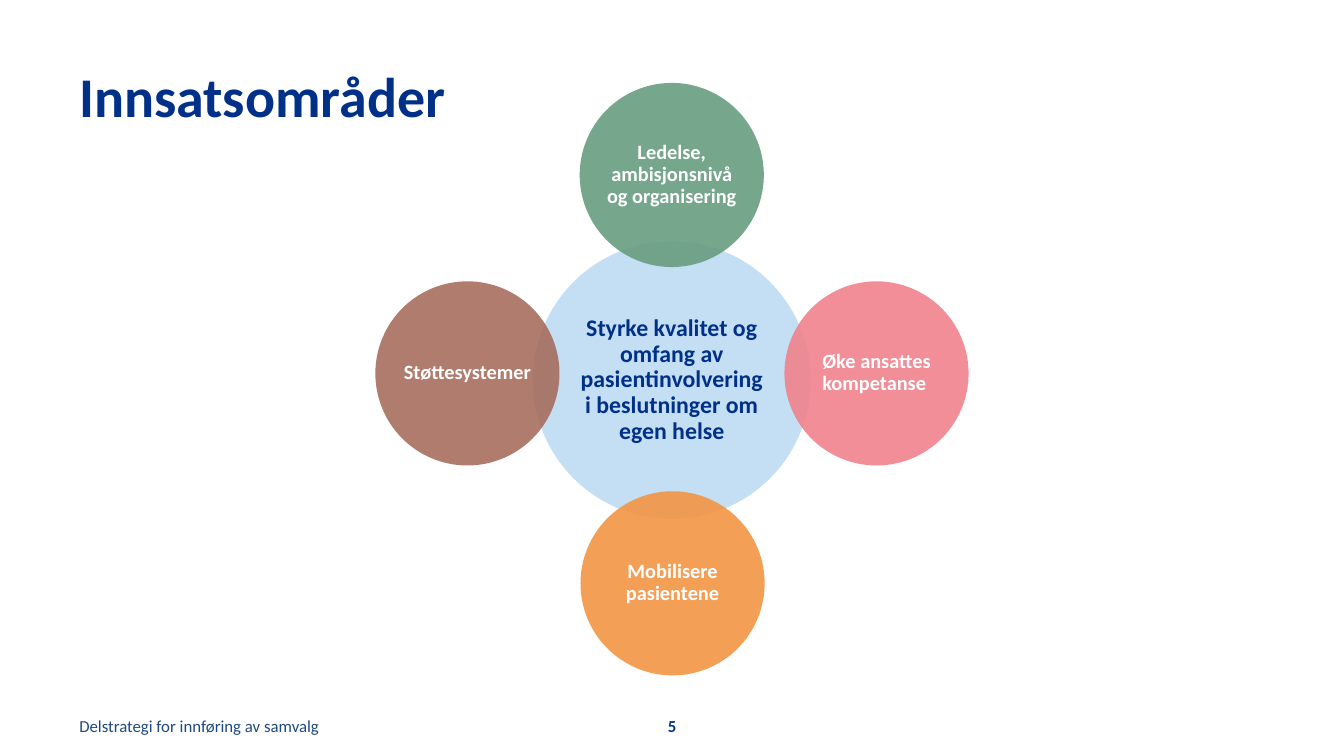
import pptx
import pptx.dml.color
import pptx.enum.shapes
import pptx.enum.text
import pptx.oxml
import pptx.oxml.ns
import pptx.util

Cm = pptx.util.Cm
Pt = pptx.util.Pt
RGBColor = pptx.dml.color.RGBColor
ALIGN = pptx.enum.text.PP_ALIGN

NAVY = RGBColor(0x00, 0x30, 0x87)
NUMBER_BLUE = RGBColor(0x00, 0x33, 0x88)
FOOTER_BLUE = RGBColor(0x1F, 0x49, 0x7D)
WHITE = RGBColor(0xFF, 0xFF, 0xFF)
LIGHT_BLUE = RGBColor(0xC4, 0xDE, 0xF4)
GREEN = RGBColor(0x68, 0x9D, 0x7F)
PINK = RGBColor(0xF0, 0x82, 0x8C)
ORANGE = RGBColor(0xF3, 0x95, 0x44)
BROWN = RGBColor(0xA7, 0x6E, 0x5E)

GOAL = "Styrke kvalitet og omfang av pasientinvolvering i beslutninger om egen helse"
FOCUS_DIAMETER = 4.64
FOCUS_AREAS = [
    ("Ledelse, ambisjonsnivå og organisering ", 16.93, 4.41, GREEN),
    ("Øke ansattes kompetanse ", 22.09, 9.41, PINK),
    ("Mobilisere pasientene", 16.95, 14.7, ORANGE),
    ("Støttesystemer", 11.78, 9.41, BROWN),
]


class SlideBuilder:
    """Holds the text style and the current slide."""

    font_name = "Calibri"

    def __init__(self, slide):
        self.slide = slide

    def set_text(self, shape, text, size, color, bold=True, align=ALIGN.CENTER,
                 line_spacing=0.9, insets=(0, 0, 0, 0)):
        """Fill a shape with one formatted, vertically centred paragraph."""
        frame = shape.text_frame
        frame.word_wrap = True
        frame.auto_size = pptx.enum.text.MSO_AUTO_SIZE.NONE
        frame.vertical_anchor = pptx.enum.text.MSO_ANCHOR.MIDDLE
        (frame.margin_left, frame.margin_top,
         frame.margin_right, frame.margin_bottom) = map(Cm, insets)
        paragraph = frame.paragraphs[0]
        paragraph.alignment = align
        paragraph.line_spacing = line_spacing
        run = paragraph.add_run()
        run.text = text
        run.font.name = self.font_name
        run.font.size = Pt(size)
        run.font.bold = bold
        run.font.color.rgb = color

    def title(self, text, left, top, width, height):
        """Place and format the title placeholder."""
        shape = self.slide.shapes.title
        shape.left, shape.top = Cm(left), Cm(top)
        shape.width, shape.height = Cm(width), Cm(height)
        self.set_text(shape, text, 40, NAVY, align=ALIGN.LEFT)

    def circle(self, text, center_x, center_y, diameter, fill, size, color,
               opacity=100, inset=0):
        """Add a filled circle around its centre, with text inside."""
        shape = self.slide.shapes.add_shape(
            pptx.enum.shapes.MSO_SHAPE.OVAL,
            Cm(center_x - diameter / 2), Cm(center_y - diameter / 2),
            Cm(diameter), Cm(diameter))
        shape.shadow.inherit = False
        shape.line.fill.background()
        shape.fill.solid()
        shape.fill.fore_color.rgb = fill
        if opacity < 100:
            fill_color = shape.element.spPr.find(".//" + pptx.oxml.ns.qn("a:srgbClr"))
            alpha = pptx.oxml.parse_xml(
                f'<a:alpha {pptx.oxml.ns.nsdecls("a")} val="{opacity * 1000}"/>')
            fill_color.append(alpha)
        self.set_text(shape, text, size, color, insets=(inset,) * 4)

    def footer(self, text, left, width, color, bold, align, insets):
        """Add a text box on the footer line."""
        shape = self.slide.shapes.add_textbox(Cm(left), Cm(17.88), Cm(width), Cm(0.81))
        self.set_text(shape, text, 12, color, bold, align, 1.0, insets)


def main():
    """Build the slide and save it."""
    presentation = pptx.Presentation()
    presentation.slide_width = Cm(33.87)
    presentation.slide_height = Cm(19.05)
    slide = presentation.slides.add_slide(presentation.slide_layouts[5])
    builder = SlideBuilder(slide)
    builder.title("Innsatsområder", 2, 1.5, 29.2, 2)
    builder.circle(GOAL, 16.93, 9.58, 7, LIGHT_BLUE, 17, NAVY, inset=0.05)
    for text, center_x, center_y, fill in FOCUS_AREAS:
        builder.circle(text, center_x, center_y, FOCUS_DIAMETER, fill, 14.5, WHITE, 90)
    builder.footer("Delstrategi for innføring av samvalg", 2, 7.22, FOOTER_BLUE,
                   False, ALIGN.LEFT, (0, 0.13, 0.25, 0.13))
    builder.footer("5", 15.82, 2.24, NUMBER_BLUE, True, ALIGN.CENTER,
                   (0.25, 0.13, 0.25, 0.13))
    presentation.save("out.pptx")


if __name__ == "__main__":
    main()
